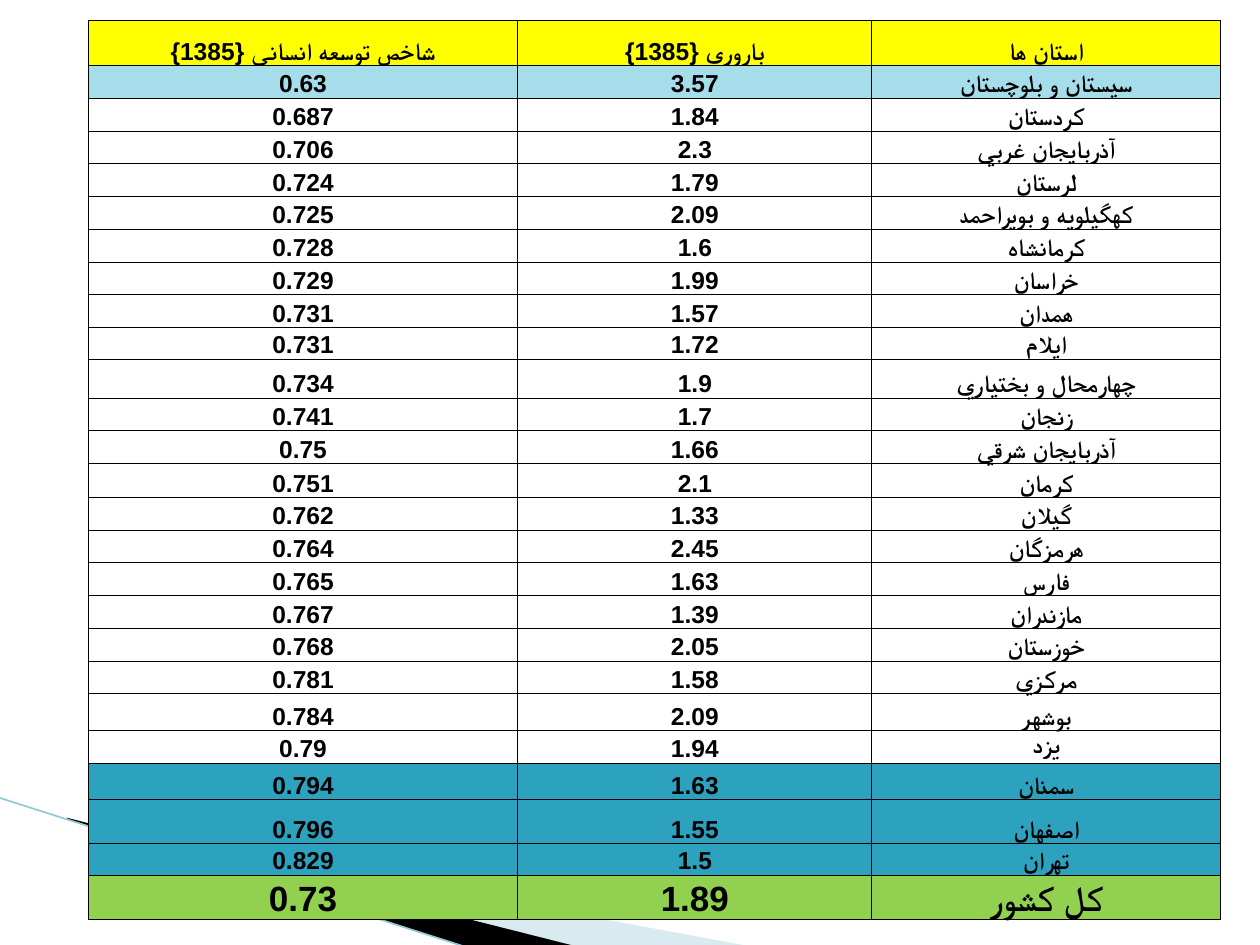
from lxml import etree
from pptx import Presentation
from pptx.dml.color import RGBColor
from pptx.enum.shapes import MSO_CONNECTOR
from pptx.enum.text import MSO_ANCHOR, PP_ALIGN
from pptx.oxml.ns import qn
from pptx.util import Inches, Pt

STRAIGHT = MSO_CONNECTOR.STRAIGHT
CENTER = PP_ALIGN.CENTER
TOP, BOTTOM = MSO_ANCHOR.TOP, MSO_ANCHOR.BOTTOM

COLORS = {
    "black": "000000", "swoosh": "A0CBDC", "edge": "97C5D8",
    "header": "FFFF00", "lowest": "A6DDEA", "highest": "2DA2BF", "total": "92D050",
}

# human development index, fertility, province
ROWS = [
    ("شاخص توسعه انسانی {1385}", "باروری {1385}", "استان ها"),
    ("0.63", "3.57", "سيستان و بلوچستان"),
    ("0.687", "1.84", "كردستان"),
    ("0.706", "2.3", "آذربايجان غربي"),
    ("0.724", "1.79", "لرستان"),
    ("0.725", "2.09", "کهگيلويه و بويراحمد"),
    ("0.728", "1.6", "كرمانشاه"),
    ("0.729", "1.99", "خراسان"),
    ("0.731", "1.57", "همدان"),
    ("0.731", "1.72", "ايلام"),
    ("0.734", "1.9", "چهارمحال و بختياري"),
    ("0.741", "1.7", "زنجان"),
    ("0.75", "1.66", "آذربايجان شرقي"),
    ("0.751", "2.1", "كرمان"),
    ("0.762", "1.33", "گيلان"),
    ("0.764", "2.45", "هرمزگان"),
    ("0.765", "1.63", "فارس"),
    ("0.767", "1.39", "مازندران"),
    ("0.768", "2.05", "خوزستان"),
    ("0.781", "1.58", "مركزي"),
    ("0.784", "2.09", "بوشهر"),
    ("0.79", "1.94", "يزد"),
    ("0.794", "1.63", "سمنان"),
    ("0.796", "1.55", "اصفهان"),
    ("0.829", "1.5", "تهران"),
    ("0.73", "1.89", "كل کشور"),
]
LAST = len(ROWS) - 1
COL_WIDTHS = [3.41, 2.81, 2.77]
ROW_HEIGHT = 0.26
OTHER_HEIGHTS = {0: 0.36, 9: 0.25, 10: 0.31, 13: 0.27, 20: 0.29,
                 22: 0.29, 23: 0.35, 24: 0.25, LAST: 0.35}
ROW_FILLS = {0: "header", 1: "lowest", 22: "highest", 23: "highest",
             24: "highest", LAST: "total"}


def rgb(name):
    return RGBColor.from_string(COLORS[name])


def add_borders(cell):
    tcPr = cell._tc.get_or_add_tcPr()
    for side in ("a:lnL", "a:lnR", "a:lnT", "a:lnB"):
        ln = etree.SubElement(tcPr, qn(side), w=str(Pt(0.5)))
        fill = etree.SubElement(ln, qn("a:solidFill"))
        etree.SubElement(fill, qn("a:srgbClr"), val=COLORS["black"])


prs = Presentation()
prs.slide_width, prs.slide_height = Inches(10), Inches(7.5)
s = prs.slides.add_slide(prs.slide_layouts[6])

# Sweeping shapes in the lower left corner
swooshes = [
    ("swoosh", 40, [(0.55, 6.51), (5.95, 7.51), (4.56, 7.51), (0.55, 6.5)]),
    ("black", 100, [(0.53, 6.49), (4.57, 7.51), (3.72, 7.52), (0.54, 6.5)]),
]
for color, opacity, points in swooshes:
    start, *rest = [(Inches(x), Inches(y)) for x, y in points]
    fb = s.shapes.build_freeform(*start)
    fb.add_line_segments(rest, close=True)
    sp = fb.convert_to_shape()
    sp.shadow.inherit = False
    sp.line.fill.background()
    sp.fill.solid()
    sp.fill.fore_color.rgb = rgb(color)
    if opacity < 100:
        clr = sp.fill._xPr.find(qn("a:solidFill"))[0]
        etree.SubElement(clr, qn("a:alpha"), val=str(opacity * 1000))

edge = s.shapes.add_connector(STRAIGHT, Inches(-0.01), Inches(6.33), Inches(3.71), Inches(7.52))
edge.line.color.rgb = rgb("edge")
edge.line.width = Pt(0.95)
etree.SubElement(edge._element.spPr, qn("a:effectLst"))

# Province table
heights = [OTHER_HEIGHTS.get(i, ROW_HEIGHT) for i in range(len(ROWS))]
table = s.shapes.add_table(len(ROWS), len(COL_WIDTHS), Inches(0.7), Inches(0.16),
                           Inches(sum(COL_WIDTHS)), Inches(sum(heights))).table
table.first_row = table.horz_banding = False
for col, width in zip(table.columns, COL_WIDTHS):
    col.width = Inches(width)
for row, height in zip(table.rows, heights):
    row.height = Inches(height)

for i, texts in enumerate(ROWS):
    for j, text in enumerate(texts):
        cell = table.cell(i, j)
        add_borders(cell)
        if i in ROW_FILLS:
            cell.fill.solid()
            cell.fill.fore_color.rgb = rgb(ROW_FILLS[i])
        else:
            cell.fill.background()
        cell.margin_left = cell.margin_right = cell.margin_top = Inches(0.01)
        cell.margin_bottom = 0
        cell.vertical_anchor = TOP if text == "يزد" else BOTTOM
        p = cell.text_frame.paragraphs[0]
        p.alignment = CENTER
        p._p.get_or_add_pPr().set("rtl", "1")
        r = p.add_run()
        r.text = text
        r.font.size = Pt(20 if i == LAST else 14)
        r.font.bold = True
        r.font.name = "Calibri"
        r.font.color.rgb = rgb("black")
        etree.SubElement(r.font._element, qn("a:cs"), typeface="Arial")

prs.save("out.pptx")
